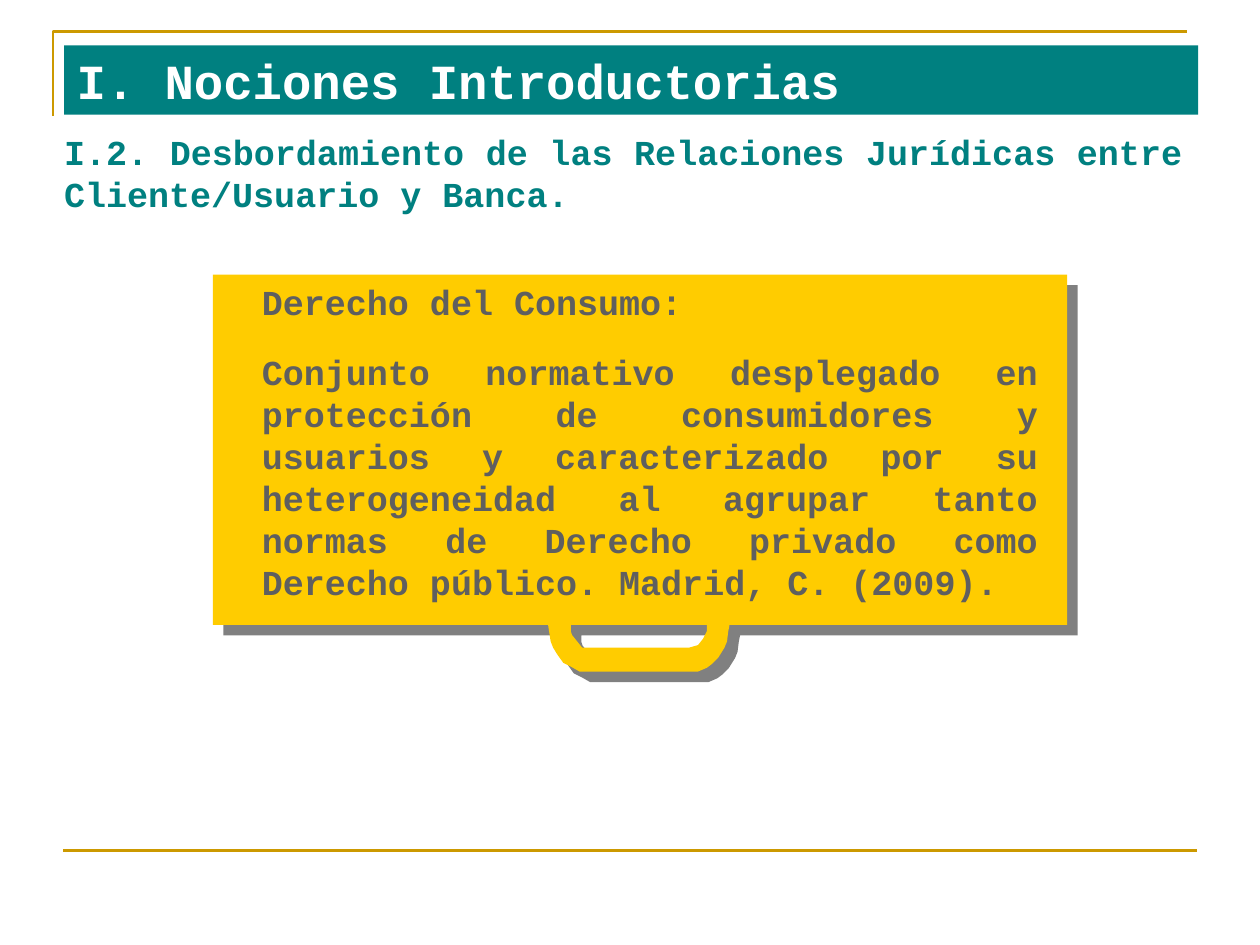
from lxml import etree
from pptx import Presentation
from pptx import util as u
from pptx.dml.color import RGBColor
from pptx.enum import shapes, text
from pptx.oxml import ns

Inches = u.Inches
FONT = "Courier New"
COLORS = {
    "gold": "CC9900",
    "teal": "008080",
    "yellow": "FFCC00",
    "shadow": "808080",
    "gray": "5F5F5F",
    "white": "FFFFFF",
}

PANEL = [
    (1.69, 2.18), (1.69, 4.96), (4.35, 4.96), (4.37, 5.09), (4.39, 5.14),
    (4.42, 5.19), (4.47, 5.26), (4.53, 5.29), (4.6, 5.33), (5.54, 5.33),
    (5.61, 5.3), (5.65, 5.27), (5.7, 5.22), (5.75, 5.14), (5.77, 5.09),
    (5.78, 5.01), (5.79, 4.96), (8.47, 4.96), (8.47, 2.18),
]
HANDLE_OPENING = [
    (4.53, 4.96), (4.53, 5.01), (4.54, 5.04), (4.58, 5.09), (4.62, 5.14),
    (5.47, 5.14), (5.54, 5.12), (5.58, 5.07), (5.61, 5.01), (5.61, 4.96),
]


def rgb(name):
    return RGBColor.from_string(COLORS[name])


def add_outline(slide, contours, closed=True):
    """Build one freeform from contours given in inches."""
    contours = [[(Inches(x), Inches(y)) for x, y in points] for points in contours]
    builder = slide.shapes.build_freeform(*contours[0][0])
    for index, points in enumerate(contours):
        if index:
            builder.move_to(*points[0])
        builder.add_line_segments(points[1:], close=closed)
    shape = builder.convert_to_shape()
    shape.shadow.inherit = False
    return shape


def style_line(line):
    line.color.rgb = rgb("gold")
    line.width = u.Pt(1.5)


def add_corner_frame(slide):
    frame = add_outline(slide, [[(0.42, 0.92), (0.42, 0.25), (9.42, 0.25)]], closed=False)
    frame.fill.background()
    style_line(frame.line)


def add_footer_line(slide):
    connector = slide.shapes.add_connector(
        shapes.MSO_CONNECTOR.STRAIGHT, Inches(0.5), Inches(6.75), Inches(9.5), Inches(6.75))
    etree.SubElement(connector._element.spPr, ns.qn("a:effectLst"))
    style_line(connector.line)


def add_panel(slide):
    panel = add_outline(slide, [PANEL, HANDLE_OPENING])
    panel.fill.solid()
    panel.fill.fore_color.rgb = rgb("yellow")
    panel.line.fill.background()
    effects = panel._element.spPr.find(ns.qn("a:effectLst"))
    shadow = etree.SubElement(
        effects, ns.qn("a:outerShdw"), dist=str(u.Pt(8.5)), dir=str(45 * 60000),
        algn="ctr", rotWithShape="0")
    etree.SubElement(shadow, ns.qn("a:srgbClr"), val=COLORS["shadow"])


def write_text(shape, wording, size, color, alignment):
    shape.text_frame.word_wrap = True
    paragraph = shape.text_frame.paragraphs[0]
    paragraph.text = wording
    paragraph.alignment = alignment
    font = paragraph.font
    font.name, font.size, font.bold = FONT, u.Pt(size), True
    font.color.rgb = rgb(color)


def add_title(slide, wording):
    bar = slide.shapes.add_shape(
        shapes.MSO_SHAPE.RECTANGLE, Inches(0.51), Inches(0.36), Inches(9), Inches(0.55))
    bar.shadow.inherit = False
    bar.fill.solid()
    bar.fill.fore_color.rgb = rgb("teal")
    bar.line.fill.background()
    write_text(bar, wording, 28, "white", text.PP_ALIGN.LEFT)


def add_text(slide, wording, color, left, top, width, height):
    box = slide.shapes.add_textbox(Inches(left), Inches(top), Inches(width), Inches(height))
    write_text(box, wording, 20, color, text.PP_ALIGN.JUSTIFY)


def main():
    presentation = Presentation()
    presentation.slide_width, presentation.slide_height = Inches(10), Inches(7.5)
    slide = presentation.slides.add_slide(presentation.slide_layouts[6])

    add_corner_frame(slide)
    add_footer_line(slide)
    add_panel(slide)
    add_text(slide, "Conjunto normativo desplegado en protección de consumidores y usuarios "
             "y caracterizado por su heterogeneidad al agrupar tanto normas de Derecho "
             "privado como Derecho público. Madrid, C. (2009).",
             "gray", 1.98, 2.73, 6.36, 1.77)
    add_text(slide, "Derecho del Consumo:", "gray", 1.98, 2.18, 3.8, 0.43)
    add_title(slide, "I. Nociones Introductorias")
    add_text(slide, "I.2. Desbordamiento de las Relaciones Jurídicas entre "
             "Cliente/Usuario y Banca.", "teal", 0.41, 0.99, 9.08, 0.77)

    presentation.save("out.pptx")


if __name__ == "__main__":
    main()
